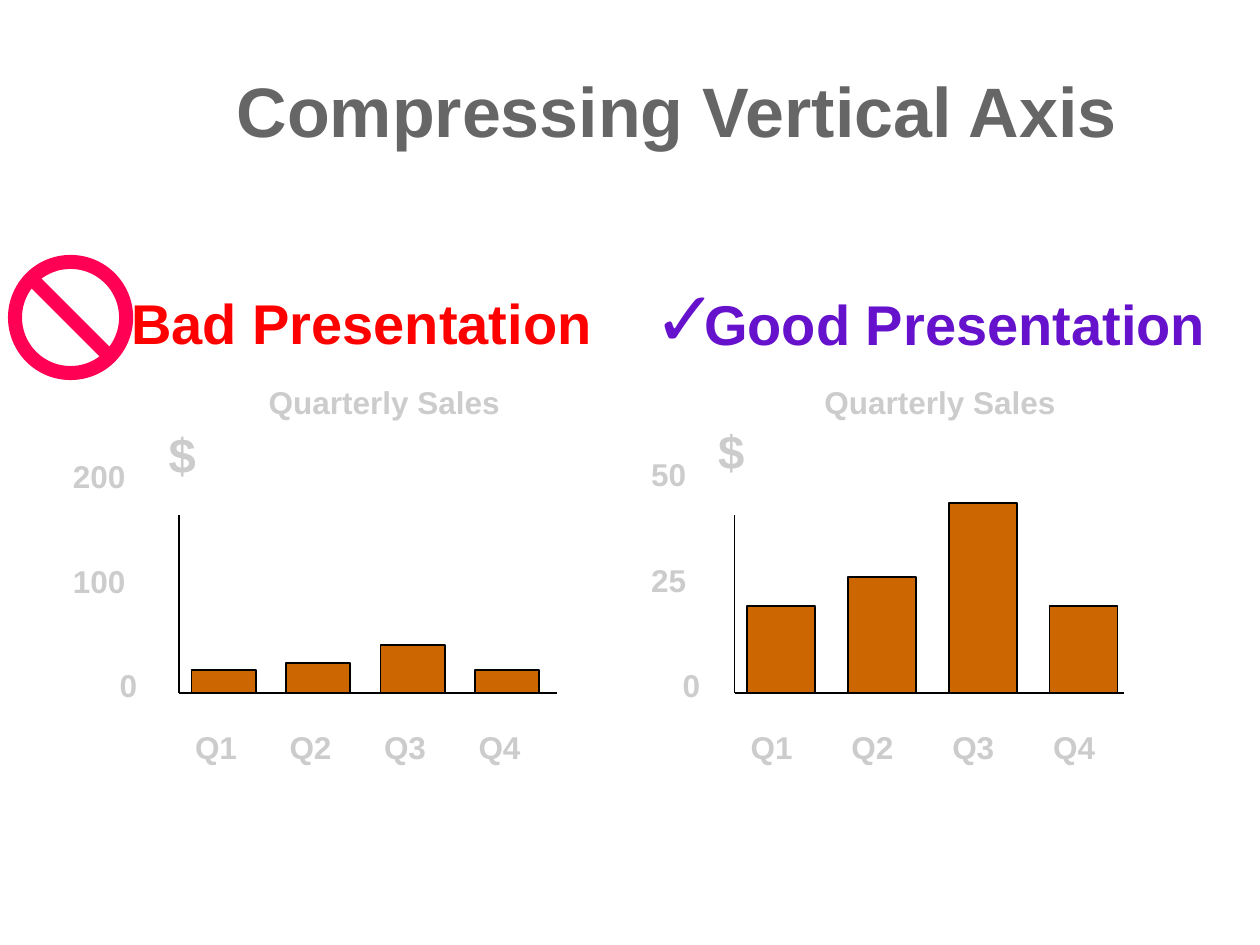
"""Build a slide that sets a flat bar graph beside a well scaled one."""
import pptx
import pptx.dml.color
import pptx.enum.shapes
import pptx.enum.text
import pptx.oxml
import pptx.oxml.ns
import pptx.util
from pptx.util import Inches

RGBColor = pptx.dml.color.RGBColor
Shape = pptx.enum.shapes.MSO_SHAPE
Align = pptx.enum.text.PP_ALIGN
Anchor = pptx.enum.text.MSO_ANCHOR

DARK = RGBColor(0x66, 0x66, 0x66)
PALE = RGBColor(0xCC, 0xCC, 0xCC)
BLACK = RGBColor(0, 0, 0)
RED = RGBColor(0xFF, 0, 0)
PINK = RGBColor(0xFF, 0, 0x54)
PURPLE = RGBColor(0x66, 0x11, 0xCC)
ORANGE = RGBColor(0xCC, 0x66, 0)
BASE = 5.5


def add_text(slide, text, left, top, width, height, size=18, color=PALE,
             align=Align.LEFT, space=0, bold=True, anchor=Anchor.TOP):
    box = slide.shapes.add_textbox(
        Inches(left), Inches(top), Inches(width), Inches(height))
    frame = box.text_frame
    frame.word_wrap = True
    frame.vertical_anchor = anchor
    para = frame.paragraphs[0]
    para.alignment = align
    para.space_before = pptx.util.Pt(space)
    run = para.add_run()
    run.text = text
    run.font.name = "Arial"
    run.font.size = pptx.util.Pt(size)
    run.font.bold = bold
    run.font.color.rgb = color


def add_form(slide, kind, left, top, width, height, fill, line):
    form = slide.shapes.add_shape(
        kind, Inches(left), Inches(top), Inches(width), Inches(height))
    form.shadow.inherit = False
    form.fill.solid()
    form.fill.fore_color.rgb = fill
    form.line.color.rgb = line
    form.line.width = pptx.util.Pt(1)
    return form


def add_line(slide, left, top, right, low):
    line = slide.shapes.add_connector(
        pptx.enum.shapes.MSO_CONNECTOR.STRAIGHT,
        Inches(left), Inches(top), Inches(right), Inches(low))
    line.line.color.rgb = BLACK
    line.line.width = pptx.util.Pt(1)
    props = line._element.spPr
    props.append(pptx.oxml.parse_xml(
        f"<a:effectLst {pptx.oxml.ns.nsdecls('a')}/>"))


def add_graph(slide, left, right, step, width, bars, names, marks, unit):
    add_text(slide, "Quarterly Sales", left + 0.24, 2.99, 2.78, 0.5,
             align=Align.CENTER, space=9)
    for i, (tall, name) in enumerate(zip(bars, names)):
        spot = left + 0.1 + i * step
        add_form(slide, Shape.RECTANGLE, spot, BASE - tall, width, tall,
                 ORANGE, BLACK)
        add_text(slide, name, spot - 0.07, 5.73, 0.64, 0.5)
    add_line(slide, left, 4.09, left, BASE)
    add_line(slide, left, BASE, right, BASE)
    for text, spot, top, wide in marks:
        add_text(slide, text, spot, top, wide, 0.5)
    spot, top, size = unit
    add_text(slide, "$", spot, top, 0.41, 0.55, size)


def main():
    deck = pptx.Presentation()
    deck.slide_width, deck.slide_height = Inches(10), Inches(7.5)
    slide = deck.slides.add_slide(deck.slide_layouts[6])
    names = ["Q1", "Q2", "Q3", "Q4"]

    add_text(slide, "Compressing Vertical Axis", 1.08, 0.25, 8.58, 1, 40,
             DARK, Align.CENTER, anchor=Anchor.BOTTOM)
    add_text(slide, "Good Presentation", 5.33, 2.25, 4.5, 0.63, 32,
             PURPLE, Align.CENTER, 16)
    add_text(slide, "Bad Presentation", 0.65, 2.24, 4.44, 0.63, 32,
             RED, Align.CENTER, 16)
    add_graph(slide, 5.83, 8.92, 0.8, 0.54, [0.69, 0.92, 1.51, 0.69], names,
              [("0", 5.32, 5.24, 0.38), ("25", 5.07, 4.4, 0.57),
               ("50", 5.07, 3.56, 0.57)], (5.6, 3.3, 27))
    add_graph(slide, 1.42, 4.42, 0.75, 0.51, [0.18, 0.24, 0.38, 0.18], names,
              [("0", 0.85, 5.24, 0.38), ("100", 0.48, 4.41, 0.76),
               ("200", 0.48, 3.58, 0.76)], (1.24, 3.32, 28))
    ban = add_form(slide, Shape.NO_SYMBOL, 0.07, 2.03, 0.98, 0.98, PINK, PINK)
    ban.adjustments[0] = 0.1
    add_text(slide, "✓", 5.09, 2.09, 0.91, 0.83, 44, PURPLE, space=22,
             bold=False)
    deck.save("out.pptx")


if __name__ == "__main__":
    main()
